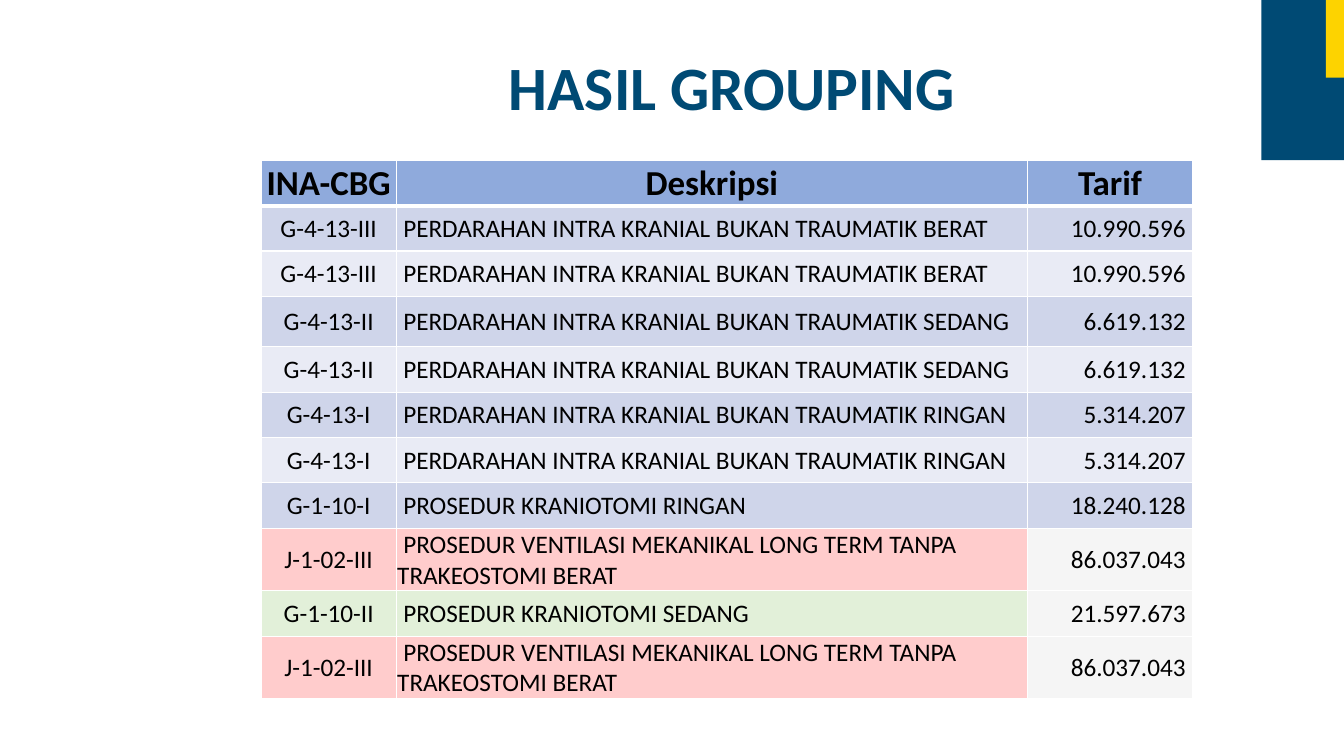
import pptx
import pptx.dml.color
import pptx.enum.shapes
import pptx.enum.text
import pptx.oxml
import pptx.oxml.ns
import pptx.util
from lxml import etree

Inches, Pt = pptx.util.Inches, pptx.util.Pt
RGB = pptx.dml.color.RGBColor.from_string
ALIGN = pptx.enum.text.PP_ALIGN
MIDDLE = pptx.enum.text.MSO_ANCHOR.MIDDLE
qn = pptx.oxml.ns.qn

# Content
TITLE = "HASIL GROUPING"
HEADER = ("INA-CBG", "Deskripsi", "Tarif")
BLEEDING = "PERDARAHAN INTRA KRANIAL BUKAN TRAUMATIK "
VENTILATION = "PROSEDUR VENTILASI MEKANIKAL LONG TERM TANPA TRAKEOSTOMI BERAT"
GROUPS = [  # code, description, tariff, highlight
    ("G-4-13-III", BLEEDING + "BERAT", "10.990.596", None),
    ("G-4-13-III", BLEEDING + "BERAT", "10.990.596", None),
    ("G-4-13-II", BLEEDING + "SEDANG", "6.619.132", None),
    ("G-4-13-II", BLEEDING + "SEDANG", "6.619.132", None),
    ("G-4-13-I", BLEEDING + "RINGAN", "5.314.207", None),
    ("G-4-13-I", BLEEDING + "RINGAN", "5.314.207", None),
    ("G-1-10-I", "PROSEDUR KRANIOTOMI RINGAN", "18.240.128", None),
    ("J-1-02-III", VENTILATION, "86.037.043", "red"),
    ("G-1-10-II", "PROSEDUR KRANIOTOMI SEDANG", "21.597.673", "green"),
    ("J-1-02-III", VENTILATION, "86.037.043", "red"),
]
COLUMNS = (1.34, 6.26, 1.64)
ROW_HEIGHT, TALL_ROW, TALL_HEIGHT = 0.45, 3, 0.5
BODY_ALIGN = (ALIGN.CENTER, ALIGN.LEFT, ALIGN.RIGHT)
CORNER = [((12.51, 0, 0.82, 1.59), "navy"), ((13.15, 0, 0.19, 0.77), "yellow")]

THEME = {
    "font": "Calibri", "title": 44, "header": 25, "body": 18,
    "navy": "004A74", "yellow": "FDD300", "black": "000000", "white": "FFFFFF",
    "head_fill": "8FAADC", "bands": ("CFD5EA", "E9EBF5"),
    "red": "FFCCCC", "green": "E2F0D9", "gray": "EDEDED",
}


def write(p, text, size, color, bold, align):
    p.alignment = align
    r = p.add_run()
    r.text = text
    formats = {"name": THEME["font"], "size": Pt(THEME[size]), "bold": bold}
    for name, value in formats.items():
        setattr(r.font, name, value)
    r.font.color.rgb = RGB(THEME[color])


def fill_solid(fill, color):
    fill.solid()
    fill.fore_color.rgb = RGB(color)


def add_borders(cell, top, bottom):
    tc_pr = cell._tc.get_or_add_tcPr()
    for side, width in (("L", 1), ("R", 1), ("T", top), ("B", bottom)):
        ln = etree.SubElement(tc_pr, qn(f"a:ln{side}"), w=str(Pt(width)))
        solid = etree.SubElement(ln, qn("a:solidFill"))
        etree.SubElement(solid, qn("a:srgbClr"), val=THEME["white"])


def style_cell(cell, row, fill):
    margins = {"margin_left": 0.01, "margin_top": 0.01, "margin_right": 0.01, "margin_bottom": 0}
    for name, value in margins.items():
        setattr(cell, name, Inches(value))
    cell.vertical_anchor = MIDDLE
    add_borders(cell, 3 if row == 1 else 1, 3 if row == 0 else 1)
    fill_solid(cell.fill, fill)


def add_table(s):
    size = (len(GROUPS) + 1, len(COLUMNS))
    heights = [TALL_HEIGHT if i == TALL_ROW else ROW_HEIGHT for i in range(size[0])]
    box = (2.59, 1.59, sum(COLUMNS), sum(heights))
    table = s.shapes.add_table(*size, *map(Inches, box)).table
    for column, width in zip(table.columns, COLUMNS):
        column.width = Inches(width)
    for row, height in zip(table.rows, heights):
        row.height = Inches(height)

    # Header row
    for col, text in enumerate(HEADER):
        cell = table.cell(0, col)
        style_cell(cell, 0, THEME["head_fill"])
        write(cell.text_frame.paragraphs[0], text, "header", "black", True, ALIGN.CENTER)

    # Group rows: banded, or highlighted with a translucent tariff
    for i, (*texts, highlight) in enumerate(GROUPS):
        for col, text in enumerate(texts):
            cell = table.cell(i + 1, col)
            fill = THEME["bands"][i % 2]
            if highlight:
                fill = THEME["gray" if col == 2 else highlight]
            style_cell(cell, i + 1, fill)
            p = cell.text_frame.paragraphs[0]
            write(p, text, "body", "black", False, BODY_ALIGN[col])
            if col == 1:
                p._p.get_or_add_pPr().set("indent", str(Inches(0.06)))
            if col == 2:
                cell.margin_right = Inches(0.07)
                if highlight:
                    color = cell._tc.tcPr.find(qn("a:solidFill"))[0]
                    etree.SubElement(color, qn("a:alpha"), val="50000")


def add_title(s):
    tf = s.shapes.add_textbox(*map(Inches, (0.01, 0.2, 12.51, 1.39))).text_frame
    tf.word_wrap = True
    tf.vertical_anchor = MIDDLE
    tf.margin_left = Inches(2.09)
    p = tf.paragraphs[0]
    p.line_spacing = 0.9
    write(p, TITLE, "title", "navy", True, ALIGN.CENTER)


def add_corner(s):
    for box, color in CORNER:
        sp = s.shapes.add_shape(pptx.enum.shapes.MSO_SHAPE.RECTANGLE, *map(Inches, box))
        sp.shadow.inherit = False
        fill_solid(sp.fill, THEME[color])
        sp.line.fill.background()


def main():
    prs = pptx.Presentation()
    prs.slide_width, prs.slide_height = Inches(13.33), Inches(7.5)
    s = prs.slides.add_slide(prs.slide_layouts[6])
    add_table(s)
    add_title(s)
    add_corner(s)
    prs.save("out.pptx")


if __name__ == "__main__":
    main()
